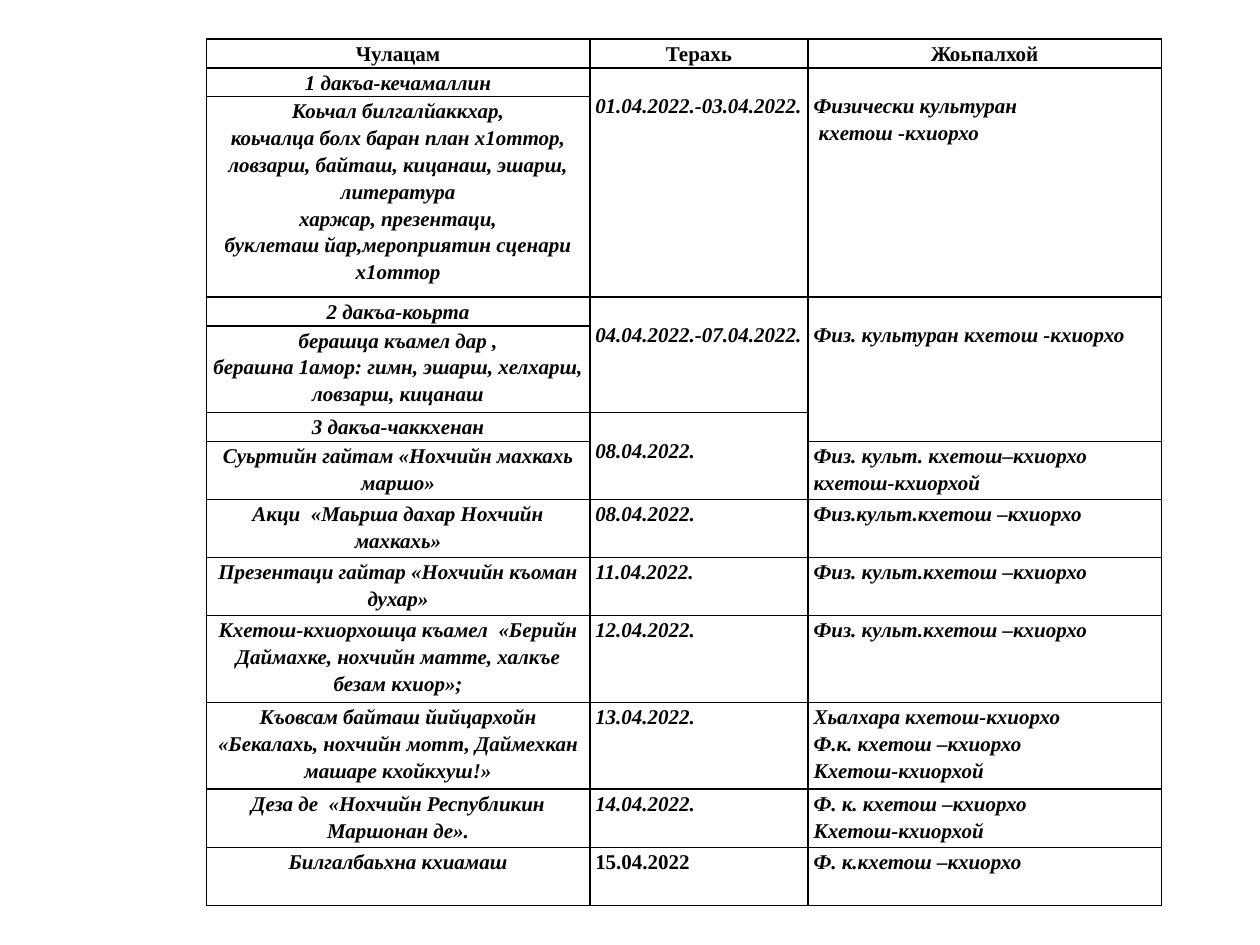
"""Build a slide with a schedule table of activities, dates and people in charge."""
from lxml import etree
from pptx import Presentation
from pptx.dml.color import RGBColor
from pptx.enum.text import MSO_ANCHOR, PP_ALIGN
from pptx.oxml.ns import qn
from pptx.util import Cm, Pt

CENTER, LEFT, TOP = PP_ALIGN.CENTER, PP_ALIGN.LEFT, MSO_ANCHOR.TOP
COLORS = {"ink": "000000"}
FONT = {"name": "Times New Roman", "size": Pt(12), "bold": True}
CELL = {"margin_left": Cm(0.11), "margin_right": Cm(0.11), "margin_top": 0,
        "margin_bottom": 0, "vertical_anchor": TOP}
COLUMN_WIDTHS = [7.73, 4.4, 7.12]
ONE_LINE, TWO_LINES, THREE_LINES, PLAN = 0.58, 1.17, 1.75, 4.04
STAGE_DROP = Cm(0.47)
UPRIGHT = {"Чулацам", "Терахь", "Жоьпалхой", "15.04.2022"}

SCHEDULE = [
    (ONE_LINE, "Чулацам", "Терахь", "Жоьпалхой"),
    (ONE_LINE, "1 дакъа-кечамаллин", "01.04.2022.-03.04.2022.",
     "Физически культуран\n кхетош -кхиорхо"),
    (PLAN, "Коьчал билгалйаккхар,\n"
     "коьчалца болх баран план х1оттор, ловзарш, байташ, кицанаш, эшарш, литература\n"
     "харжар, презентаци,\n"
     "буклеташ йар,мероприятин сценари х1оттор", None, None),
    (ONE_LINE, "2 дакъа-коьрта", "04.04.2022.-07.04.2022.",
     "Физ. культуран кхетош -кхиорхо"),
    (THREE_LINES, "берашца къамел дар ,\n"
     "берашна 1амор: гимн, эшарш, хелхарш, ловзарш, кицанаш", None, None),
    (ONE_LINE, "3 дакъа-чаккхенан", "08.04.2022.", None),
    (TWO_LINES, "Суьртийн гайтам «Нохчийн махкахь маршо»", None,
     "Физ. культ. кхетош–кхиорхо\nкхетош-кхиорхой"),
    (TWO_LINES, "Акци  «Маьрша дахар Нохчийн махкахь»", "08.04.2022.",
     "Физ.культ.кхетош –кхиорхо"),
    (TWO_LINES, "Презентаци гайтар «Нохчийн къоман духар»", "11.04.2022.",
     "Физ. культ.кхетош –кхиорхо"),
    (THREE_LINES, "Кхетош-кхиорхошца къамел  «Берийн Даймахке, нохчийн матте, "
     "халкъе безам кхиор»;", "12.04.2022.", "Физ. культ.кхетош –кхиорхо"),
    (THREE_LINES, "Къовсам байташ йийцархойн «Бекалахь, нохчийн мотт, Даймехкан "
     "машаре кхойкхуш!»", "13.04.2022.",
     "Хьалхара кхетош-кхиорхо\nФ.к. кхетош –кхиорхо\nКхетош-кхиорхой"),
    (TWO_LINES, "Деза де  «Нохчийн Республикин Маршонан де».", "14.04.2022.",
     "Ф. к. кхетош –кхиорхо\nКхетош-кхиорхой"),
    (TWO_LINES, "Билгалбаьхна кхиамаш", "15.04.2022", "Ф. к.кхетош –кхиорхо"),
]
STAGE_SPANS = {(1, 1): 2, (1, 2): 2, (3, 1): 2, (3, 2): 3, (5, 1): 2}


def add_borders(cell):
    properties = cell._tc.get_or_add_tcPr()
    for side in ("a:lnL", "a:lnR", "a:lnT", "a:lnB"):
        line = etree.SubElement(properties, qn(side), w=str(Pt(1)))
        fill = etree.SubElement(line, qn("a:solidFill"))
        etree.SubElement(fill, qn("a:srgbClr"), val=COLORS["ink"])


presentation = Presentation()
presentation.slide_width, presentation.slide_height = Cm(25.4), Cm(19.05)
slide = presentation.slides.add_slide(presentation.slide_layouts[6])

schedule = slide.shapes.add_table(
    len(SCHEDULE), len(COLUMN_WIDTHS), Cm(4.16), Cm(0.79),
    Cm(sum(COLUMN_WIDTHS)), Cm(sum(entry[0] for entry in SCHEDULE))).table
schedule.first_row = schedule.horz_banding = False
for column, width in zip(schedule.columns, COLUMN_WIDTHS):
    column.width = Cm(width)

for row, (height, *texts) in enumerate(SCHEDULE):
    schedule.rows[row].height = Cm(height)
    for col, text in enumerate(texts):
        cell = schedule.cell(row, col)
        add_borders(cell)
        cell.fill.background()
        for key, value in CELL.items():
            setattr(cell, key, value)
        if (row, col) in STAGE_SPANS:
            cell.margin_top = STAGE_DROP
        cell.text = text or ""
        for paragraph in cell.text_frame.paragraphs:
            paragraph.alignment = CENTER if row == 0 or col == 0 else LEFT
            paragraph.line_spacing = 1.15
            for key, value in FONT.items():
                setattr(paragraph.font, key, value)
            paragraph.font.italic = text not in UPRIGHT
            paragraph.font.color.rgb = RGBColor.from_string(COLORS["ink"])

for (row, col), span in STAGE_SPANS.items():
    schedule.cell(row, col).merge(schedule.cell(row + span - 1, col))

presentation.save("out.pptx")
